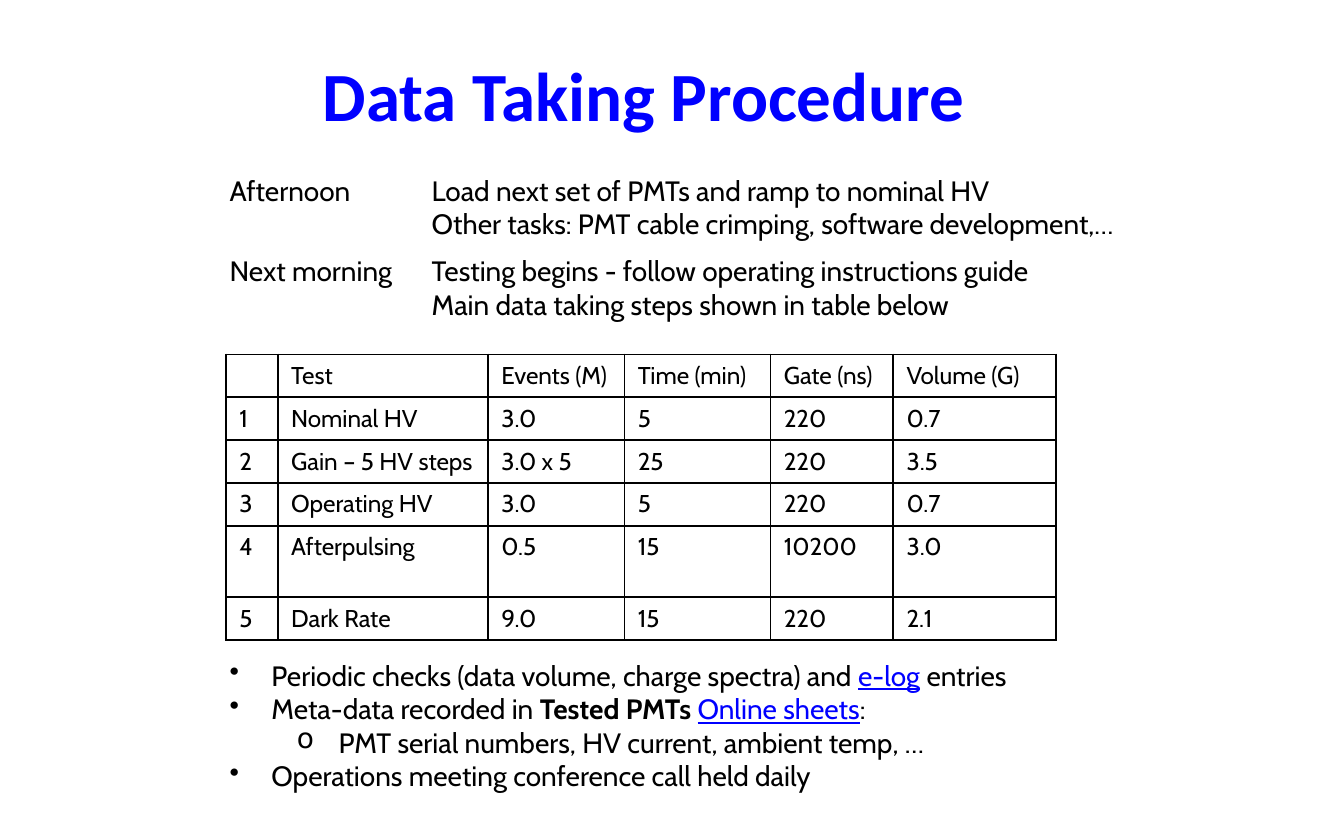
from lxml.etree import SubElement
from pptx import Presentation
from pptx.dml.color import RGBColor
from pptx.enum.text import PP_ALIGN as Align
from pptx.oxml import parse_xml
from pptx.oxml.ns import nsdecls, qn
from pptx.util import Cm, Pt

BLACK = RGBColor(0x00, 0x00, 0x00)
BLUE = RGBColor(0x00, 0x00, 0xFF)

BODY_FONT = "Cabin"
BODY_SIZE = 15
TABLE_SIZE = 13

# Each step: when it happens, what is done, line spacing
SCHEDULE = [
    ("Afternoon", "Load next set of PMTs and ramp to nominal HV", 1.0),
    ("", "Other tasks: PMT cable crimping, software development,…", 1.0),
    ("Next morning", "Testing begins - follow operating instructions guide", 1.4),
    ("", "Main data taking steps shown in table below", 1.0),
]

TESTS = [
    ("", "Test", "Events (M)", "Time (min)", "Gate (ns)", "Volume (G)"),
    ("1", "Nominal HV", "3.0", "5", "220", "0.7"),
    ("2", "Gain – 5 HV steps", "3.0 x 5", "25", "220", "3.5"),
    ("3", "Operating HV", "3.0", "5", "220", "0.7"),
    ("4", "Afterpulsing", "0.5", "15", "10200", "3.0"),
    ("5", "Dark Rate", "9.0", "15", "220", "2.1"),
]
COLUMN_WIDTHS = [0.98, 3.97, 2.58, 2.76, 2.32, 3.08]
ROW_HEIGHT = 0.81
TALL_ROW, TALL_ROW_HEIGHT = 4, 1.35

# Each note: level, then runs of (text, style)
NOTES = [
    (0, [("Periodic checks (data volume, charge spectra) and ", ""),
         ("e-log", "link"), (" entries", "")]),
    (0, [("Meta-data recorded in ", ""), ("Tested PMTs ", "bold"),
         ("Online sheets", "link"), (":", "")]),
    (1, [("PMT serial numbers, HV current, ambient temp, …", "")]),
    (0, [("Operations meeting conference call held daily", "")]),
]
BULLETS = ["•", "o"]
BULLET_GAP = 0.79
LEVEL_STEP = 1.27


def add_run(paragraph, text, size, color=BLACK, font=BODY_FONT, bold=False, underline=False):
    run = paragraph.add_run()
    run.text = text
    run.font.name = font
    run.font.size = Pt(size)
    run.font.bold = bold
    run.font.underline = underline
    run.font.color.rgb = color


def add_text_frame(slide, left, top, width, height):
    frame = slide.shapes.add_textbox(Cm(left), Cm(top), Cm(width), Cm(height)).text_frame
    frame.word_wrap = True
    return frame


def next_paragraph(frame, index):
    return frame.paragraphs[0] if index == 0 else frame.add_paragraph()


def add_title(slide, left, top, width, height):
    paragraph = add_text_frame(slide, left, top, width, height).paragraphs[0]
    paragraph.alignment = Align.CENTER
    add_run(paragraph, "Data Taking Procedure", 37, BLUE, "Calibri", bold=True)


def add_schedule(slide, left, top, width, height, task_offset=3.82):
    """Place the times at the left and the tasks at one tab stop."""
    frame = add_text_frame(slide, left, top, width, height)
    for index, (time, task, spacing) in enumerate(SCHEDULE):
        paragraph = next_paragraph(frame, index)
        tabs = SubElement(paragraph._p.get_or_add_pPr(), qn("a:tabLst"))
        SubElement(tabs, qn("a:tab"), pos=str(Cm(task_offset)), algn="l")
        paragraph.line_spacing = spacing
        add_run(paragraph, f"{time}\t{task}", BODY_SIZE)


def add_borders(cell):
    properties = cell._tc.get_or_add_tcPr()
    for position, side in enumerate(("lnL", "lnR", "lnT", "lnB")):
        properties.insert(position, parse_xml(
            f'<a:{side} {nsdecls("a")} w="{Pt(1)}"><a:solidFill>'
            f'<a:srgbClr val="{BLACK}"/></a:solidFill></a:{side}>'))


def add_test_table(slide, left, top):
    heights = [ROW_HEIGHT] * len(TESTS)
    heights[TALL_ROW] = TALL_ROW_HEIGHT
    table = slide.shapes.add_table(
        len(TESTS), len(COLUMN_WIDTHS), Cm(left), Cm(top),
        Cm(sum(COLUMN_WIDTHS)), Cm(sum(heights))).table
    table.first_row = False
    table.horz_banding = False
    for column, width in zip(table.columns, COLUMN_WIDTHS):
        column.width = Cm(width)
    for row, height, values in zip(table.rows, heights, TESTS):
        row.height = Cm(height)
        for cell, value in zip(row.cells, values):
            cell.fill.background()
            add_borders(cell)
            paragraph = cell.text_frame.paragraphs[0]
            if value:
                add_run(paragraph, value, TABLE_SIZE)
            else:
                SubElement(paragraph._p, qn("a:endParaRPr"), sz=str(TABLE_SIZE * 100))


def add_notes(slide, left, top, width, height):
    frame = add_text_frame(slide, left, top, width, height)
    for index, (level, runs) in enumerate(NOTES):
        paragraph = next_paragraph(frame, index)
        paragraph.level = level
        properties = paragraph._p.get_or_add_pPr()
        properties.set("marL", str(Cm(BULLET_GAP + level * LEVEL_STEP)))
        properties.set("indent", str(-Cm(BULLET_GAP)))
        SubElement(properties, qn("a:buChar"), char=BULLETS[level])
        for text, style in runs:
            is_link = style == "link"
            add_run(paragraph, text, BODY_SIZE, BLUE if is_link else BLACK,
                    bold=style == "bold", underline=is_link)


def main():
    presentation = Presentation()
    presentation.slide_width = Cm(25.4)
    presentation.slide_height = Cm(15.88)
    slide = presentation.slides.add_slide(presentation.slide_layouts[6])
    add_title(slide, 1.14, 0.86, 22.05, 1.73)
    add_schedule(slide, 4.09, 3.15, 18.36, 3.1)
    add_test_table(slide, 4.27, 6.7)
    add_notes(slide, 4.09, 12.32, 18.36, 2.8)
    presentation.save("out.pptx")


if __name__ == "__main__":
    main()
